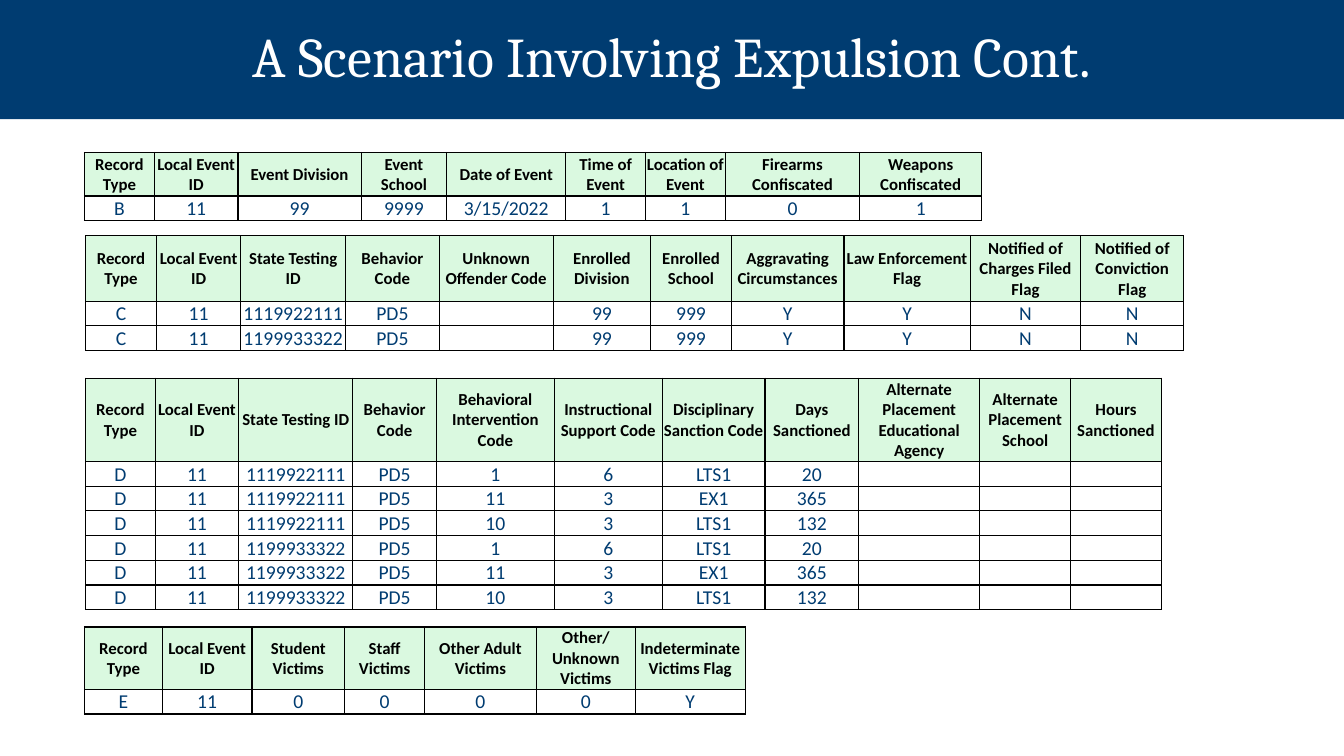
from lxml.etree import SubElement as Sub
from pptx import Presentation
from pptx.dml.color import RGBColor as RGB
from pptx.enum.text import MSO_ANCHOR as Anchor, PP_ALIGN as Align
from pptx.oxml.ns import qn
from pptx.util import Cm, Pt

NAVY = RGB(0x00, 0x3C, 0x71)
MINT = RGB(0xDA, 0xF9, 0xE0)
BLACK = RGB(0, 0, 0)
WHITE = RGB(255, 255, 255)
WIDE, HIGH = 33.87, 19.05
ROW = 0.61

EVENT = [
    ["Record Type", "Local Event ID", "Event Division", "Event School",
     "Date of Event", "Time of Event", "Location of Event",
     "Firearms Confiscated", "Weapons Confiscated"],
    ["B", "11", "99", "9999", "3/15/2022", "1", "1", "0", "1"],
]
PUPILS = ["1119922111", "1199933322"]
OFFENSE = [
    ["Record Type", "Local Event ID", "State Testing ID", "Behavior Code",
     "Unknown Offender Code", "Enrolled Division", "Enrolled School",
     "Aggravating Circumstances", "Law Enforcement Flag",
     "Notified of Charges Filed Flag", "Notified of Conviction Flag"],
] + [["C", "11", pupil, "PD5", "", "99", "999", "Y", "Y", "N", "N"]
     for pupil in PUPILS]
STEPS = [["1", "6", "LTS1", "20"], ["11", "3", "EX1", "365"],
         ["10", "3", "LTS1", "132"]]
ACTION = [
    ["Record Type", "Local Event ID", "State Testing ID", "Behavior Code",
     "Behavioral Intervention Code", "Instructional Support Code",
     "Disciplinary Sanction Code", "Days Sanctioned",
     "Alternate Placement Educational Agency",
     "Alternate Placement School", "Hours Sanctioned"],
] + [["D", "11", pupil, "PD5", *step, "", "", ""]
     for pupil in PUPILS for step in STEPS]
VICTIM = [
    ["Record Type", "Local Event ID", "Student Victims", "Staff Victims",
     "Other Adult Victims", "Other/Unknown Victims",
     "Indeterminate Victims Flag"],
    ["E", "11", "0", "0", "0", "0", "Y"],
]
TABLES = [
    (2.13, 3.84, 1.1, EVENT,
     [1.76, 2.11, 3.1, 2.16, 3, 2.01, 2.01, 3.39, 3.07]),
    (2.16, 5.94, 1.65, OFFENSE,
     [1.78, 2.13, 2.64, 2.36, 2.87, 2.46, 2.03, 2.84, 3.18, 2.79, 2.59]),
    (2.16, 9.53, 2.1, ACTION,
     [1.75, 2.11, 2.87, 2.11, 2.97, 2.72, 2.59, 2.36, 3.05, 2.29, 2.29]),
    (2.13, 15.8, 1.57, VICTIM,
     [1.96, 2.26, 2.34, 2.01, 2.82, 2.49, 2.77]),
]


def write(para, text, face, size, color, bold=False):
    """Add one centred run to a paragraph."""
    para.alignment = Align.CENTER
    run = para.add_run()
    run.text = text
    font = run.font
    font.name, font.size, font.bold = face, Pt(size), bold
    font.color.rgb = color


def border(cell):
    """Draw a thin black line on each side of a cell."""
    props = cell._tc.get_or_add_tcPr()
    for side in ("lnL", "lnR", "lnT", "lnB"):
        line = Sub(props, qn(f"a:{side}"), w=str(Pt(1)))
        fill = Sub(line, qn("a:solidFill"))
        Sub(fill, qn("a:srgbClr"), val=str(BLACK))


def fill_cell(cell, text, head):
    """Format a cell as heading or data and write its text."""
    border(cell)
    cell.margin_left = cell.margin_right = cell.margin_top = Cm(0.02)
    cell.margin_bottom = 0
    cell.vertical_anchor = Anchor.MIDDLE
    para = cell.text_frame.paragraphs[0]
    if head:
        cell.fill.solid()
        cell.fill.fore_color.rgb = MINT
        write(para, text, "Calibri", 12, BLACK, True)
    else:
        cell.fill.background()
        if text:
            write(para, text, "Calibri", 14, NAVY)
        else:
            Sub(para._p, qn("a:endParaRPr"), sz="1400")


def add_grid(slide, left, top, head, rows, widths):
    """Place a record table at the given corner."""
    tall = head + ROW * (len(rows) - 1)
    frame = slide.shapes.add_table(len(rows), len(widths), Cm(left), Cm(top),
                                   Cm(sum(widths)), Cm(tall))
    grid = frame.table
    grid.horz_banding = False
    for col, width in zip(grid.columns, widths):
        col.width = Cm(width)
    for i, texts in enumerate(rows):
        grid.rows[i].height = Cm(ROW if i else head)
        for j, text in enumerate(texts):
            fill_cell(grid.cell(i, j), text, i == 0)


def add_title(slide, left, top, width, height):
    """Turn the title placeholder into a navy banner."""
    title = slide.shapes.title
    title.left, title.top = Cm(left), Cm(top)
    title.width, title.height = Cm(width), Cm(height)
    title.fill.solid()
    title.fill.fore_color.rgb = NAVY
    frame = title.text_frame
    frame.vertical_anchor = Anchor.MIDDLE
    para = frame.paragraphs[0]
    para.line_spacing = 0.9
    write(para, "A Scenario Involving Expulsion Cont.", "Cambria", 40, WHITE)


def main():
    """Build the slide and save it."""
    deck = Presentation()
    deck.slide_width, deck.slide_height = Cm(WIDE), Cm(HIGH)
    slide = deck.slides.add_slide(deck.slide_layouts[5])
    add_title(slide, 0, 0, WIDE, 3)
    for table in TABLES:
        add_grid(slide, *table)
    deck.save("out.pptx")


if __name__ == "__main__":
    main()
